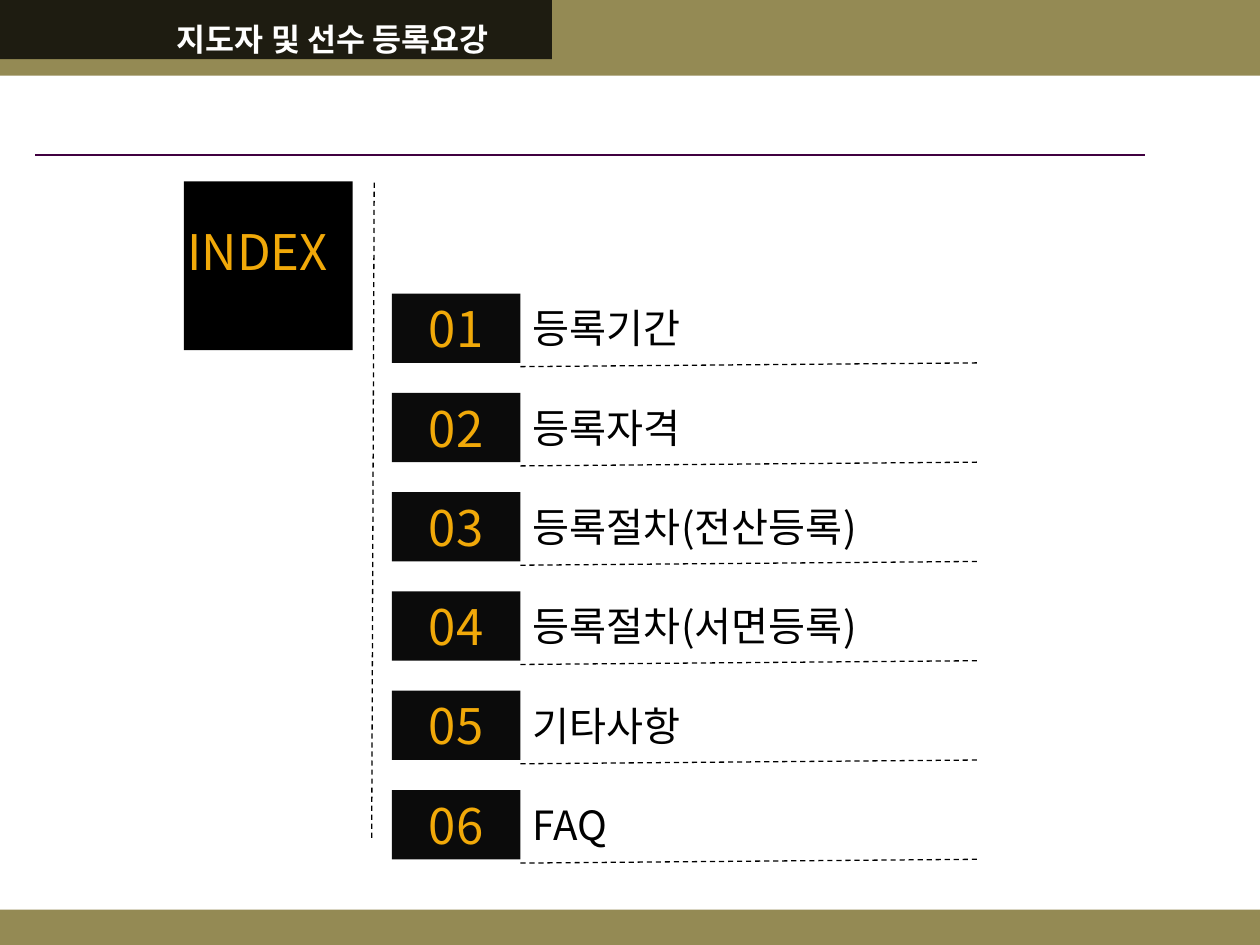
from typing import NamedTuple

from lxml.etree import SubElement
from pptx import Presentation
from pptx.dml.color import RGBColor
from pptx.enum.dml import MSO_LINE
from pptx.enum.shapes import MSO_CONNECTOR, MSO_SHAPE
from pptx.enum.text import MSO_ANCHOR, PP_ALIGN
from pptx.oxml.ns import qn
from pptx.util import Inches, Pt

FONT = "Noto Sans CJK KR"
OLIVE, DARK, BLACK, TILE = "948A54", "1E1C11", "000000", "0B0B0B"
AMBER, WHITE, PURPLE = "F1A909", "FFFFFF", "400040"


class Box(NamedTuple):
    left: float
    top: float
    width: float
    height: float


class Entry(NamedTuple):
    number: str
    label: str


ENTRIES = [
    Entry("01", "등록기간"),
    Entry("02", "등록자격"),
    Entry("03", "등록절차(전산등록)"),
    Entry("04", "등록절차(서면등록)"),
    Entry("05", "기타사항"),
    Entry("06", "FAQ"),
]
FIRST_TOP, LAST_TOP = 2.33, 6.27
PITCH = (LAST_TOP - FIRST_TOP) / (len(ENTRIES) - 1)
TILE_LEFT, TILE_WIDTH, TILE_HEIGHT = 3.11, 1.02, 0.55
LABEL_LEFT, RULE_RIGHT = TILE_LEFT + TILE_WIDTH, 7.76


def rgb(color: str) -> RGBColor:
    return RGBColor.from_string(color)


def write(sp, text: str, size: float, color: str, bold: bool = False,
          align=PP_ALIGN.LEFT, anchor=MSO_ANCHOR.TOP) -> None:
    tf = sp.text_frame
    frame = {"word_wrap": True, "vertical_anchor": anchor,
             "margin_top": 0, "margin_bottom": 0}
    for name, value in frame.items():
        setattr(tf, name, value)
    p = tf.paragraphs[0]
    p.alignment = align
    r = p.add_run()
    r.text = text
    for name, value in {"name": FONT, "size": Pt(size), "bold": bold}.items():
        setattr(r.font, name, value)
    r.font.color.rgb = rgb(color)
    SubElement(r.font._element, qn("a:ea")).set("typeface", FONT)


def add_rect(s, box: Box, fill: str):
    sp = s.shapes.add_shape(MSO_SHAPE.RECTANGLE, *map(Inches, box))
    sp.shadow.inherit = False
    sp.fill.solid()
    sp.fill.fore_color.rgb = rgb(fill)
    sp.line.fill.background()
    return sp


def add_text(s, box: Box, text: str, size: float, color: str, **style) -> None:
    write(s.shapes.add_textbox(*map(Inches, box)), text, size, color, **style)


def add_line(s, x1: float, y1: float, x2: float, y2: float,
             color: str = BLACK, width: float = 0.75, dash=MSO_LINE.DASH) -> None:
    cx = s.shapes.add_connector(MSO_CONNECTOR.STRAIGHT,
                                *map(Inches, (x1, y1, x2, y2)))
    cx.line.color.rgb = rgb(color)
    cx.line.width = Pt(width)
    cx.line.dash_style = dash
    SubElement(cx._element.spPr, qn("a:effectLst"))


def add_entry(s, entry: Entry, top: float) -> None:
    """Draw one index row: number tile, label and the slanted rule below."""
    tile = add_rect(s, Box(TILE_LEFT, top, TILE_WIDTH, TILE_HEIGHT), TILE)
    write(tile, entry.number, 28, AMBER,
          align=PP_ALIGN.CENTER, anchor=MSO_ANCHOR.MIDDLE)
    add_text(s, Box(LABEL_LEFT, top + 0.08, 3.59, 0.49), entry.label, 23, BLACK)
    add_line(s, LABEL_LEFT, top + 0.58, RULE_RIGHT, top + 0.55)


def main() -> None:
    prs = Presentation()
    prs.slide_width, prs.slide_height = Inches(10), Inches(7.5)
    s = prs.slides.add_slide(prs.slide_layouts[6])

    add_rect(s, Box(0, 0, 10, 0.6), OLIVE)
    add_rect(s, Box(0, 0, 4.38, 0.47), DARK)
    add_rect(s, Box(0, 7.22, 10, 0.28), OLIVE)
    add_text(s, Box(0.91, 0.13, 3.46, 0.36), "지도자 및 선수 등록요강", 18, WHITE,
             bold=True, align=PP_ALIGN.CENTER, anchor=MSO_ANCHOR.MIDDLE)
    add_line(s, 0.28, 1.23, 9.09, 1.23, PURPLE, 1.25, MSO_LINE.SOLID)

    add_rect(s, Box(1.46, 1.44, 1.34, 1.34), BLACK)
    add_text(s, Box(1.39, 1.76, 1.5, 0.57), "INDEX", 28, AMBER)
    add_line(s, 2.97, 1.45, 2.95, 6.66)

    for i, entry in enumerate(ENTRIES):
        add_entry(s, entry, FIRST_TOP + i * PITCH)

    prs.save("out.pptx")


if __name__ == "__main__":
    main()
